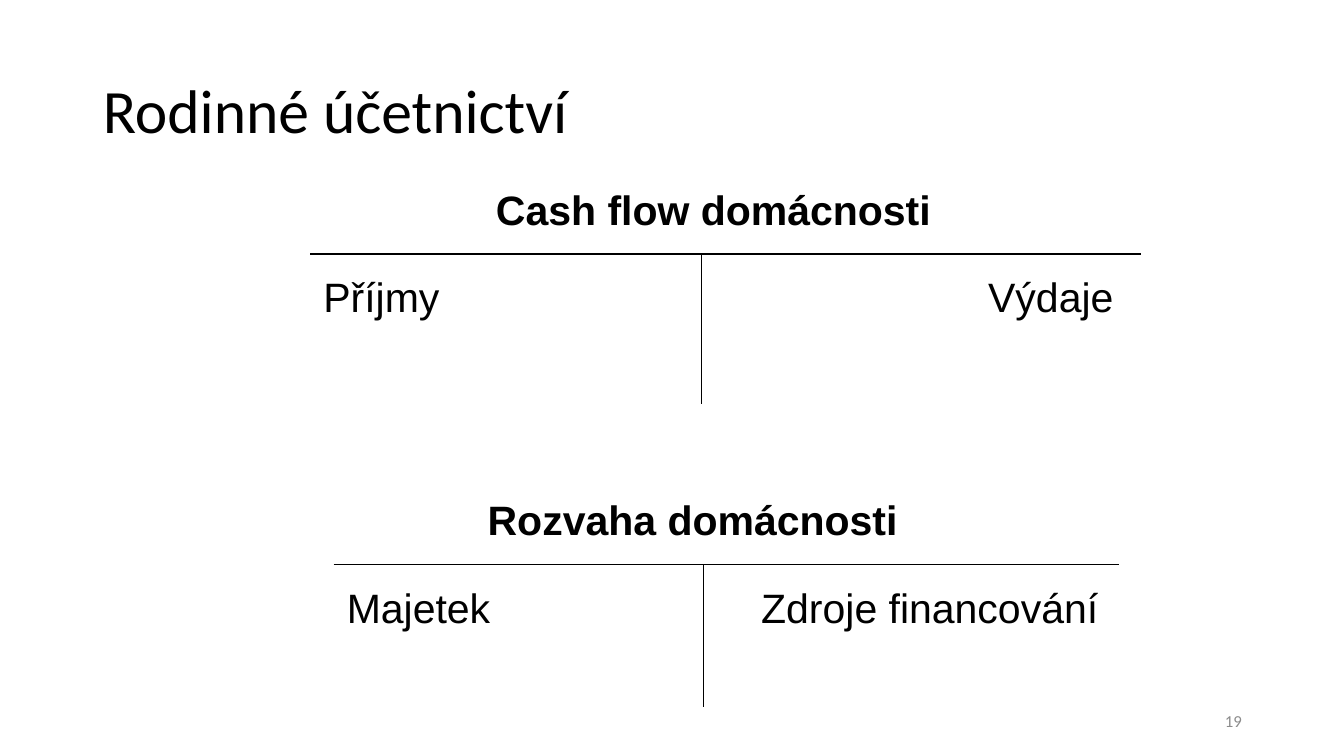
from lxml.etree import SubElement
from pptx import Presentation
from pptx.dml.color import RGBColor
from pptx.enum.shapes import MSO_CONNECTOR
from pptx.enum.text import MSO_ANCHOR, PP_ALIGN
from pptx.oxml.ns import qn
from pptx.util import Cm, Pt

BLACK = RGBColor(0x00, 0x00, 0x00)
GRAY = RGBColor(0x8C, 0x8C, 0x8C)


def place(shape, left, top, width, height):
    shape.left, shape.top = Cm(left), Cm(top)
    shape.width, shape.height = Cm(width), Cm(height)


def write_text(shape, text, *, size, font="Arial", color=BLACK, bold=False,
               align=PP_ALIGN.LEFT, anchor=MSO_ANCHOR.TOP,
               inset_x=0.25, inset_y=0.13, line_spacing=1.0):
    frame = shape.text_frame
    frame.word_wrap = True
    frame.vertical_anchor = anchor
    frame.margin_left = frame.margin_right = Cm(inset_x)
    frame.margin_top = frame.margin_bottom = Cm(inset_y)
    frame.text = text
    paragraph = frame.paragraphs[0]
    paragraph.alignment = align
    paragraph.line_spacing = line_spacing
    paragraph.font.name = font
    paragraph.font.size = Pt(size)
    paragraph.font.bold = bold
    paragraph.font.color.rgb = color


def add_text(shapes, text, left, top, width, height, **text_format):
    box = shapes.add_textbox(Cm(left), Cm(top), Cm(width), Cm(height))
    write_text(box, text, **text_format)


def add_line(shapes, x1, y1, x2, y2, weight):
    line = shapes.add_connector(MSO_CONNECTOR.STRAIGHT,
                                Cm(x1), Cm(y1), Cm(x2), Cm(y2))
    line.line.color.rgb = BLACK
    line.line.width = Pt(weight)
    SubElement(line._element.spPr, qn("a:effectLst"))


def add_account(slide, heading, debit, credit, *, left, right, bar, stem,
                bottom, heading_left, credit_right, weight):
    """Draw a T account: a heading, a bar with a stem and two side labels."""
    shapes = slide.shapes.add_group_shape().shapes
    add_line(shapes, left, bar, right, bar, weight)
    add_line(shapes, stem, bar, stem, bottom, weight)

    label_top, label_height = bar + 0.27, 2.15
    credit_left = 18.26
    label_format = dict(size=29.3, inset_x=0.33, inset_y=0.18)
    add_text(shapes, debit, left, label_top, 8.3, label_height,
             align=PP_ALIGN.JUSTIFY, **label_format)
    add_text(shapes, credit, credit_left, label_top,
             credit_right - credit_left, label_height,
             align=PP_ALIGN.RIGHT, **label_format)
    add_text(shapes, heading, heading_left, bar - 1.93, 13.5, 1.6,
             bold=True, align=PP_ALIGN.JUSTIFY, **label_format)


def main():
    presentation = Presentation()
    presentation.slide_width, presentation.slide_height = Cm(33.87), Cm(19.05)
    slide = presentation.slides.add_slide(presentation.slide_layouts[5])

    # Title
    title = slide.shapes.title
    place(title, 2.34, 1.02, 29.21, 3.68)
    write_text(title, "Rodinné účetnictví", size=44, font="Calibri",
               anchor=MSO_ANCHOR.MIDDLE, line_spacing=0.9)

    # Slide number
    add_text(slide.shapes, "19", 23.93, 17.65, 7.62, 1.02, size=12,
             font="Calibri", color=GRAY, align=PP_ALIGN.RIGHT,
             anchor=MSO_ANCHOR.MIDDLE)

    # T accounts
    add_account(slide, "Cash flow domácnosti", "Příjmy", "Výdaje",
                left=7.82, right=28.75, bar=6.4, stem=17.68, bottom=10.19,
                heading_left=12.17, credit_right=28.39, weight=1.25)
    add_account(slide, "Rozvaha domácnosti", "Majetek", "Zdroje financování",
                left=8.41, right=28.19, bar=14.22, stem=17.73, bottom=17.81,
                heading_left=11.96, credit_right=28.01, weight=0.75)

    presentation.save("out.pptx")


if __name__ == "__main__":
    main()
